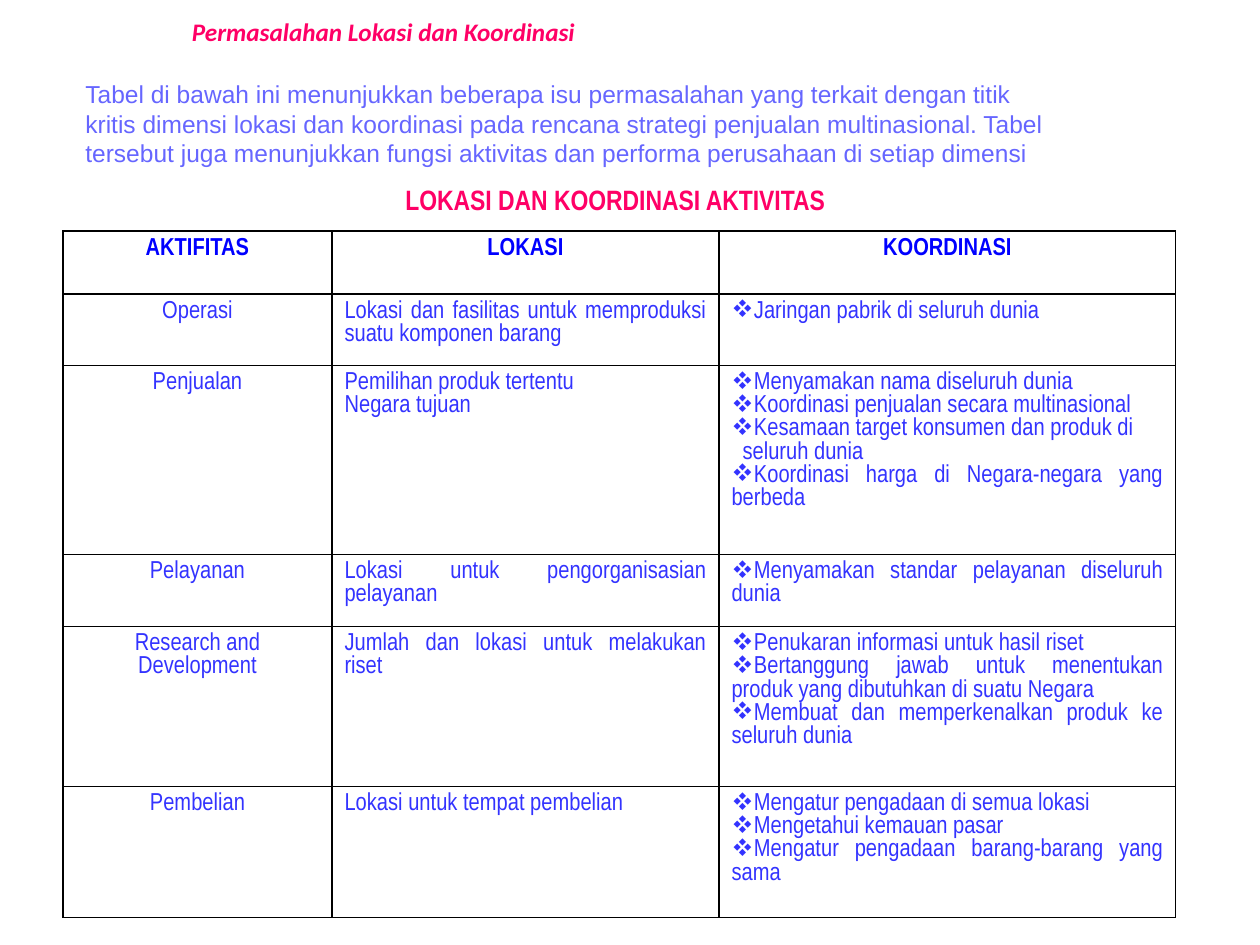
from lxml.etree import SubElement as Sub
from pptx import Presentation
from pptx.dml.color import RGBColor as Rgb
from pptx.enum.text import MSO_ANCHOR as Anchor, PP_ALIGN as Align
from pptx.oxml import parse_xml
from pptx.oxml.ns import nsdecls, qn
from pptx.util import Emu, Pt

COLORS = {"pink": "FF0066", "head": "0000FF", "cell": "3333FF",
          "intro": "6666FF", "line": "000000"}
NARROW = "Arial Narrow"
HANG = "Kesamaan target konsumen dan produk di\vseluruh dunia"


def px(n):
    return Emu(round(n * 914400 / 126))


class Deck:
    def __init__(self):
        self.prs = Presentation()
        self.prs.slide_width, self.prs.slide_height = px(1260), px(945)
        self.slide = self.prs.slides.add_slide(self.prs.slide_layouts[6])

    def style(self, frame, font, size, color, bold=False, italic=False,
              align=Align.LEFT):
        for par in frame.paragraphs:
            par.alignment = align
            for run in par.runs:
                f = run.font
                f.name, f.size, f.bold, f.italic = font, Pt(size), bold, italic
                f.color.rgb = Rgb.from_string(COLORS[color])

    def text(self, box, words, anchor=Anchor.MIDDLE, wrap=True, **look):
        frame = self.slide.shapes.add_textbox(*map(px, box)).text_frame
        frame.text, frame.word_wrap = words, wrap
        frame.vertical_anchor = anchor
        self.style(frame, **look)

    def bullets(self, frame):
        for par in frame.paragraphs:
            hang = 0
            if par.text == HANG:
                hang, par.alignment = px(11), Align.LEFT
            props = par._p.get_or_add_pPr()
            props.set("marL", str(hang))
            props.set("indent", str(-hang))
            # In Wingdings the letter v is the four-diamond mark
            Sub(props, qn("a:buFont")).set("typeface", "Wingdings")
            Sub(props, qn("a:buChar")).set("char", "v")

    def border(self, cell, row):
        props = cell._tc.get_or_add_tcPr()
        widths = {"L": 0.75, "R": 0.75, "T": 1 if row < 2 else 0.75,
                  "B": 1 if row == 0 else 0.75}
        for i, (side, width) in enumerate(widths.items()):
            props.insert(i, parse_xml(
                f'<a:ln{side} {nsdecls("a")} w="{Pt(width)}"><a:solidFill>'
                f'<a:srgbClr val="{COLORS["line"]}"/></a:solidFill></a:ln{side}>'))

    def table(self, left, top, cols, rows, data):
        box = map(px, (left, top, sum(cols), sum(rows)))
        grid = self.slide.shapes.add_table(len(rows), len(cols), *box).table
        grid.first_row = grid.horz_banding = False
        for col, width in zip(grid.columns, cols):
            col.width = px(width)
        for r, (height, line) in enumerate(zip(rows, data)):
            grid.rows[r].height = px(height)
            for c, words in enumerate(line):
                cell = grid.cell(r, c)
                frame = cell.text_frame
                frame.text = words
                head = r == 0
                mid = head or c == 0
                self.style(frame, NARROW, 14, "head" if head else "cell", bold=head,
                           align=Align.CENTER if mid else Align.JUSTIFY)
                if c == 2 and not head:
                    self.bullets(frame)
                cell.fill.background()
                self.border(cell, r)


ROWS = [
    ("AKTIFITAS", "LOKASI", "KOORDINASI"),
    ("Operasi", "Lokasi dan fasilitas untuk memproduksi suatu komponen barang",
     "Jaringan pabrik di seluruh dunia"),
    ("Penjualan", "Pemilihan produk tertentu\nNegara tujuan",
     "Menyamakan nama diseluruh dunia\n"
     "Koordinasi penjualan secara multinasional\n"
     f"{HANG}\n"
     "Koordinasi harga di Negara-negara yang berbeda"),
    ("Pelayanan", "Lokasi untuk pengorganisasian pelayanan",
     "Menyamakan standar pelayanan diseluruh dunia"),
    ("Research and Development", "Jumlah dan lokasi untuk melakukan riset",
     "Penukaran informasi untuk hasil riset\n"
     "Bertanggung jawab untuk menentukan produk yang dibutuhkan di suatu Negara\n"
     "Membuat dan memperkenalkan produk ke seluruh dunia"),
    ("Pembelian", "Lokasi untuk tempat pembelian",
     "Mengatur pengadaan di semua lokasi\n"
     "Mengetahui kemauan pasar\n"
     "Mengatur pengadaan barang-barang yang sama"),
]


def main():
    deck = Deck()
    # Title and table heading
    deck.text((21, 10, 725, 42), "Permasalahan Lokasi dan Koordinasi",
              font="Calibri", size=14.4, color="pink", bold=True, italic=True,
              align=Align.CENTER)
    deck.text((393, 176, 450, 47), "LOKASI DAN KOORDINASI AKTIVITAS", wrap=False,
              font=NARROW, size=16, color="pink", bold=True)
    # Activity table
    deck.table(63, 231, (269, 387, 457), (63, 71, 189, 72, 160, 131), ROWS)
    # Introduction
    deck.text((73, 73, 1008, 101),
              "Tabel di bawah ini menunjukkan beberapa isu permasalahan yang terkait "
              "dengan titik kritis dimensi lokasi dan koordinasi pada rencana strategi "
              "penjualan multinasional. Tabel tersebut juga menunjukkan fungsi "
              "aktivitas dan performa perusahaan di setiap dimensi",
              anchor=Anchor.TOP, font="Arial", size=14, color="intro")
    deck.prs.save("out.pptx")


if __name__ == "__main__":
    main()
